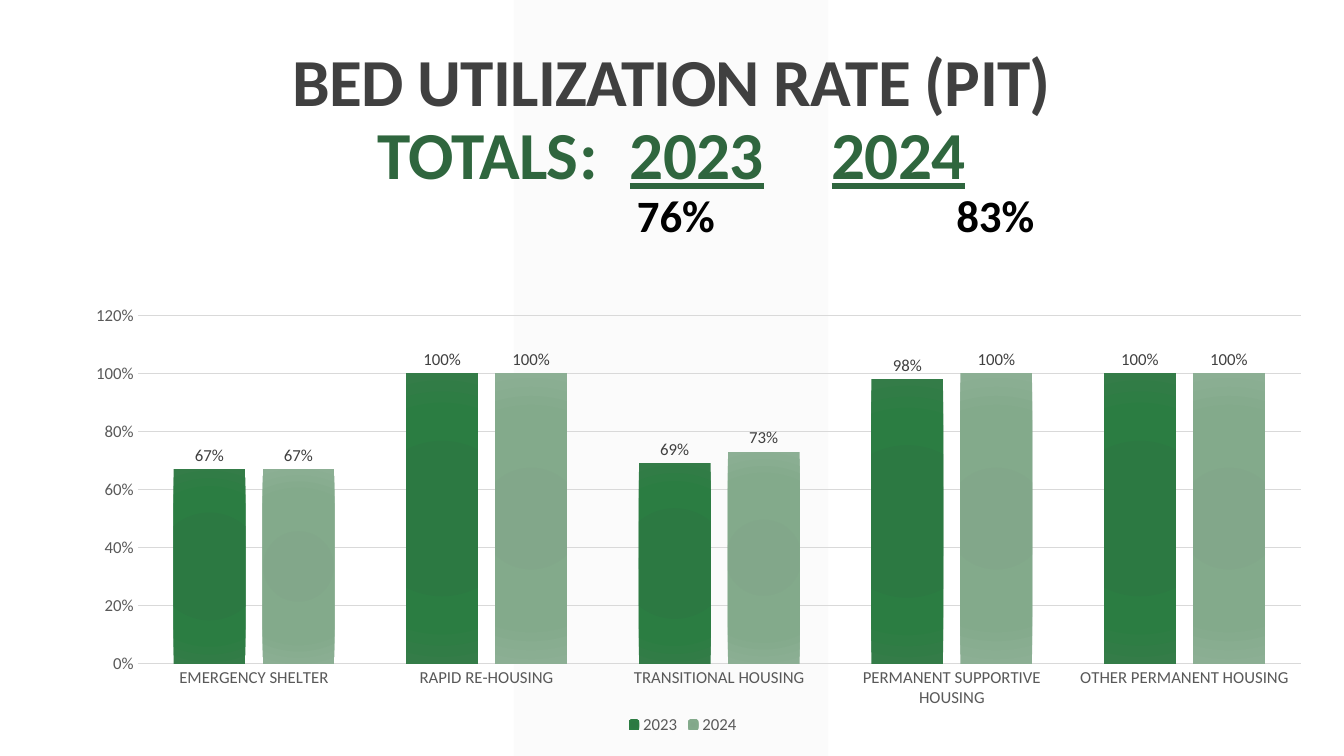
from pptx import Presentation
from pptx import oxml
from pptx import util as u
from pptx.chart import data
from pptx.dml import color
from pptx.enum import chart as ch
from pptx.enum import shapes, text
from pptx.oxml import ns

RGB = color.RGBColor
BAND = RGB(0xF2, 0xF2, 0xF2)
DARK = RGB(0x40, 0x40, 0x40)
GRAY = RGB(0x59, 0x59, 0x59)
GRID = RGB(0xD9, 0xD9, 0xD9)
GREEN = RGB(0x2F, 0x66, 0x3E)
BLACK = RGB(0, 0, 0)
DEEP = [RGB(0x2A, 0x7A, 0x41), RGB(0x2C, 0x79, 0x42),
        RGB(0x2B, 0x7D, 0x42), RGB(0x34, 0x7C, 0x48)]
PALE = [RGB(0x80, 0xA6, 0x88), RGB(0x82, 0xA7, 0x8A),
        RGB(0x83, 0xAA, 0x8B), RGB(0x8C, 0xAF, 0x94)]
STOPS = [0, 34, 70, 100]

KINDS = ["EMERGENCY SHELTER", "RAPID RE-HOUSING", "TRANSITIONAL HOUSING",
         "PERMANENT SUPPORTIVE HOUSING", "OTHER PERMANENT HOUSING"]
RATES = [("2023", [0.67, 1, 0.69, 0.98, 1], DEEP),
         ("2024", [0.67, 1, 0.73, 1, 1], PALE)]


class Deck:
    face = "Calibri"

    def __init__(self):
        self.prs = Presentation()
        self.prs.slide_width = u.Cm(33.87)
        self.prs.slide_height = u.Cm(19.05)
        self.slide = self.prs.slides.add_slide(self.prs.slide_layouts[6])

    def font(self, font, size, tint, bold=False):
        font.name = self.face
        font.size = u.Pt(size)
        font.color.rgb = tint
        font.bold = bold

    def band(self, box, tint, alpha):
        kind = shapes.MSO_SHAPE.PARALLELOGRAM
        shape = self.slide.shapes.add_shape(kind, *map(u.Cm, box))
        shape.adjustments[0] = 0
        shape.shadow.inherit = False
        shape.line.fill.background()
        shape.fill.solid()
        shape.fill.fore_color.rgb = tint
        clr = shape.fill._xPr.find(".//" + ns.qn("a:srgbClr"))
        node = oxml.parse_xml(f'<a:alpha {ns.nsdecls("a")} val="{alpha * 1000}"/>')
        clr.append(node)

    def frame(self, box):
        frame = self.slide.shapes.add_textbox(*map(u.Cm, box)).text_frame
        frame.word_wrap = True
        return frame

    def title(self, box, head, parts):
        frame = self.frame(box)
        frame.vertical_anchor = text.MSO_ANCHOR.BOTTOM
        para = frame.paragraphs[0]
        para.alignment = text.PP_ALIGN.CENTER
        para.line_spacing = 0.9
        para.text = head + "\v"
        for part, _ in parts:
            para.add_run().text = part
        tints = [DARK] + [GREEN] * len(parts)
        lines = [False] + [line for _, line in parts]
        for run, tint, line in zip(para.runs, tints, lines):
            self.font(run.font, 48, tint, True)
            run.font.underline = line
            run._r.get_or_add_rPr().set("spc", "-50")

    def label(self, box, words):
        frame = self.frame(box)
        frame.text = words
        self.font(frame.paragraphs[0].runs[0].font, 32, BLACK, True)

    def blend(self, series, tints):
        stops = "".join(
            f'<a:gs pos="{pos * 1000}"><a:srgbClr val="{tint}"/></a:gs>'
            for pos, tint in zip(STOPS, tints))
        series._element.get_or_add_spPr().append(oxml.parse_xml(
            f'<a:gradFill {ns.nsdecls("a")} rotWithShape="1">'
            f'<a:gsLst>{stops}</a:gsLst><a:path path="circle">'
            '<a:fillToRect l="100000" t="100000" r="100000" b="100000"/>'
            '</a:path></a:gradFill>'))

    def place(self, chart, x, y, w, h):
        area = chart._chartSpace.chart.plotArea
        for old in area.findall(ns.qn("c:layout")):
            area.remove(old)
        sizes = "".join(f'<c:{key} val="{val}"/>'
                        for key, val in zip("xywh", (x, y, w, h)))
        area.insert(0, oxml.parse_xml(
            f'<c:layout {ns.nsdecls("c")}><c:manualLayout>'
            '<c:layoutTarget val="inner"/>'
            '<c:xMode val="edge"/><c:yMode val="edge"/>'
            f'{sizes}</c:manualLayout></c:layout>'))

    def bars(self, box, kinds, rates):
        book = data.CategoryChartData(number_format="0%")
        book.categories = kinds
        for name, vals, _ in rates:
            book.add_series(name, vals)
        kind = ch.XL_CHART_TYPE.COLUMN_CLUSTERED
        chart = self.slide.shapes.add_chart(kind, *map(u.Cm, box), book).chart
        self.font(chart.font, 10, BLACK)
        chart.has_title = False
        chart.has_legend = True
        chart.legend.position = ch.XL_LEGEND_POSITION.BOTTOM
        chart.legend.include_in_layout = False
        self.font(chart.legend.font, 12, GRAY)
        plot = chart.plots[0]
        plot.gap_width = 100
        plot.overlap = -24
        plot.vary_by_categories = False
        for series, (_, _, tints) in zip(plot.series, rates):
            self.blend(series, tints)
            tags = series.data_labels
            tags.show_value = True
            tags.position = ch.XL_LABEL_POSITION.OUTSIDE_END
            tags.number_format = "0%"
            tags.number_format_is_linked = False
            self.font(tags.font, 12, DARK)
        cat, val = chart.category_axis, chart.value_axis
        for axis in (cat, val):
            axis.major_tick_mark = ch.XL_TICK_MARK.NONE
            axis.minor_tick_mark = ch.XL_TICK_MARK.NONE
            self.font(axis.tick_labels.font, 12, GRAY)
        cat.format.line.color.rgb = GRID
        cat.format.line.width = u.Pt(1)
        val.format.line.fill.background()
        val.minimum_scale, val.maximum_scale, val.major_unit = 0, 1.2, 0.2
        val.tick_labels.number_format = "0%"
        val.tick_labels.number_format_is_linked = False
        val.major_gridlines.format.line.color.rgb = GRID
        val.major_gridlines.format.line.width = u.Pt(0.75)
        self.place(chart, 0.059, 0.121, 0.941, 0.723)


def main():
    deck = Deck()
    deck.band((12.95, 0, 7.92, 19.05), BAND, 30)
    deck.title((1.98, 0.97, 29.9, 4.04), "BED UTILIZATION RATE (PIT)",
               [("TOTALS\t:\t", False), ("2023", True),
                ("\t\t", False), ("2024", True)])
    deck.bars((1.63, 6.48, 31.17, 12.14), KINDS, RATES)
    for left, total in ((15.8, "76%"), (23.85, "83%")):
        deck.label((left, 4.6, 2.54, 1.63), total)
    deck.prs.save("out.pptx")


if __name__ == "__main__":
    main()
